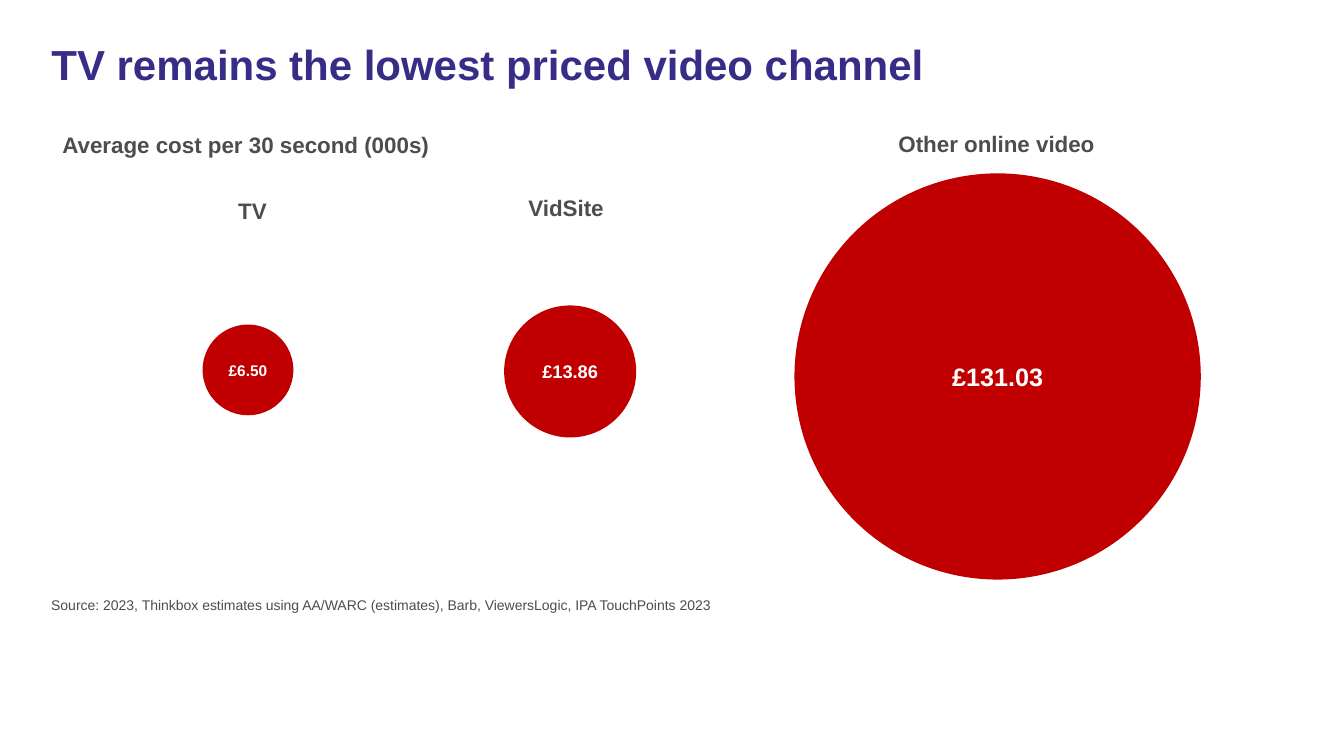
from dataclasses import dataclass

from pptx import Presentation
from pptx.dml.color import RGBColor
from pptx.enum.shapes import MSO_SHAPE as Shape
from pptx.enum.text import MSO_ANCHOR as Anchor, MSO_AUTO_SIZE as AutoSize, PP_ALIGN as Align
from pptx.util import Inches, Pt


@dataclass(frozen=True)
class Theme:
    font: str = "Arial"
    title_color: str = "372D87"
    text_color: str = "4D4D4D"
    bubble_color: str = "C00000"
    value_color: str = "FFFFFF"
    title_size: int = 30
    label_size: int = 16
    source_size: int = 10


class SlideBuilder:
    def __init__(self, slide, theme):
        self.slide = slide
        self.theme = theme

    def add_text(self, shape, text, size, color, bold=True, align=Align.LEFT):
        """Put one formatted run in the shape and return its paragraph."""
        paragraph = shape.text_frame.paragraphs[0]
        paragraph.alignment = align
        run = paragraph.add_run()
        run.text = text
        run.font.name = self.theme.font
        run.font.size = Pt(size)
        run.font.bold = bold
        run.font.color.rgb = RGBColor.from_string(color)
        return paragraph

    def title(self, text, left, top, width, height):
        shape = self.slide.shapes.title
        shape.left, shape.top = Inches(left), Inches(top)
        shape.width, shape.height = Inches(width), Inches(height)
        shape.text_frame.vertical_anchor = Anchor.TOP
        shape.text_frame.auto_size = AutoSize.NONE
        paragraph = self.add_text(shape, text, self.theme.title_size, self.theme.title_color)
        paragraph.line_spacing = 0.9

    def text_box(self, left, top, width, height, wrap=True):
        shape = self.slide.shapes.add_textbox(
            Inches(left), Inches(top), Inches(width), Inches(height))
        shape.text_frame.word_wrap = wrap
        return shape

    def label(self, text, left, top, width, wrap=False, align=Align.CENTER):
        shape = self.text_box(left, top, width, 0.37, wrap)
        shape.text_frame.auto_size = AutoSize.SHAPE_TO_FIT_TEXT
        self.add_text(shape, text, self.theme.label_size, self.theme.text_color, align=align)

    def source(self, text, left, top, width, height):
        shape = self.text_box(left, top, width, height)
        self.add_text(shape, text, self.theme.source_size, self.theme.text_color, bold=False)

    def bubble(self, text, left, top, diameter, size):
        shape = self.slide.shapes.add_shape(
            Shape.OVAL, Inches(left), Inches(top), Inches(diameter), Inches(diameter))
        shape.shadow.inherit = False
        shape.fill.solid()
        shape.fill.fore_color.rgb = RGBColor.from_string(self.theme.bubble_color)
        shape.line.fill.background()
        frame = shape.text_frame
        frame.vertical_anchor = Anchor.MIDDLE
        frame.word_wrap = False
        self.add_text(shape, text, size, self.theme.value_color, align=Align.CENTER)


def main():
    presentation = Presentation()
    presentation.slide_width, presentation.slide_height = Inches(13.33), Inches(7.5)
    title_only = presentation.slide_layouts.get_by_name("Title Only")
    builder = SlideBuilder(presentation.slides.add_slide(title_only), Theme())

    builder.title("TV remains the lowest priced video channel", 0.41, 0.39, 12.4, 1.12)
    builder.label("Average cost per 30 second (000s)", 0.52, 1.25, 4.74,
                  wrap=True, align=Align.LEFT)

    # Each channel: label (text, left, top, width), bubble (text, left, top, diameter, size)
    channels = [
        (("TV ", 2.26, 1.91, 0.55), ("£6.50", 2.01, 3.22, 0.9, 11)),
        (("VidSite ", 5.05, 1.88, 1.19), ("£13.86", 5, 3.03, 1.31, 13)),
        (("Other online video ", 8.78, 1.24, 2.27), ("£131.03", 7.88, 1.72, 4.03, 18)),
    ]
    for label, bubble in channels:
        builder.bubble(*bubble)
        builder.label(*label)

    builder.source("Source: 2023, Thinkbox estimates using AA/WARC (estimates), Barb, "
                   "ViewersLogic, IPA TouchPoints 2023", 0.41, 5.87, 12.4, 0.33)
    presentation.save("out.pptx")


if __name__ == "__main__":
    main()
